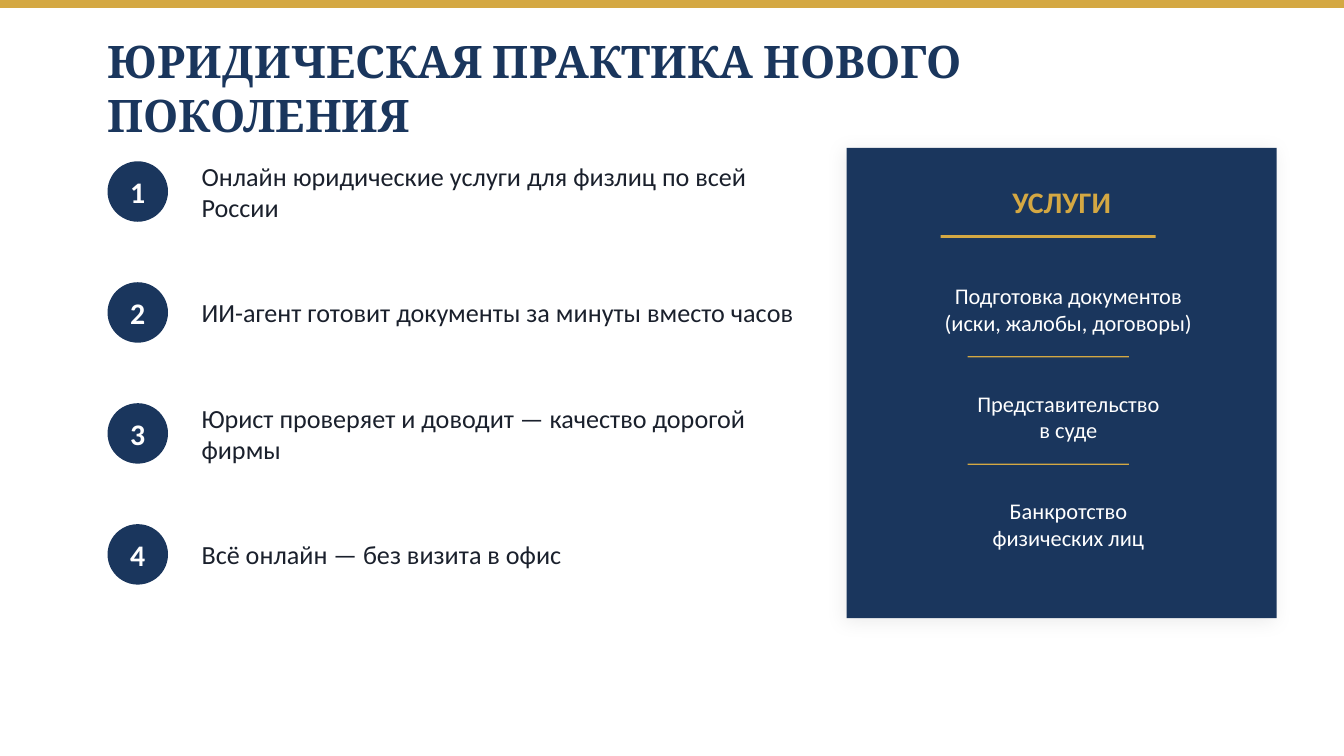
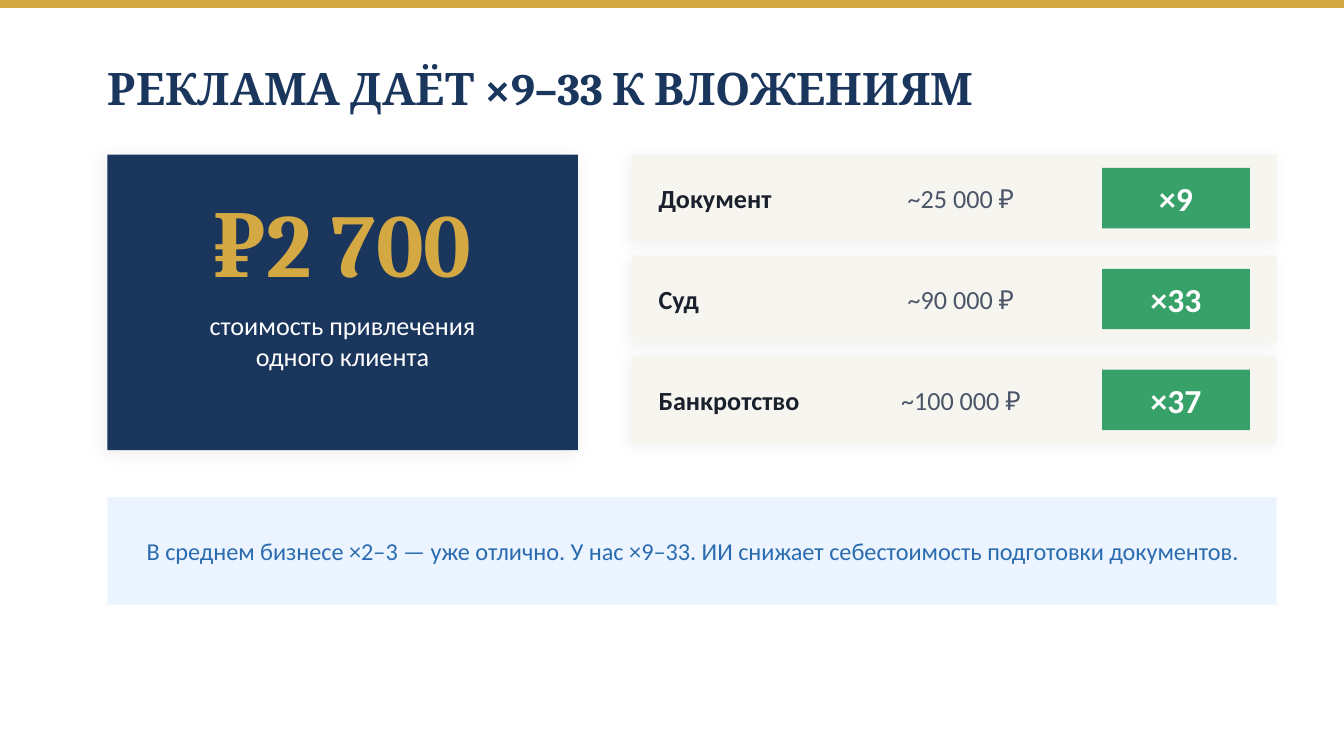
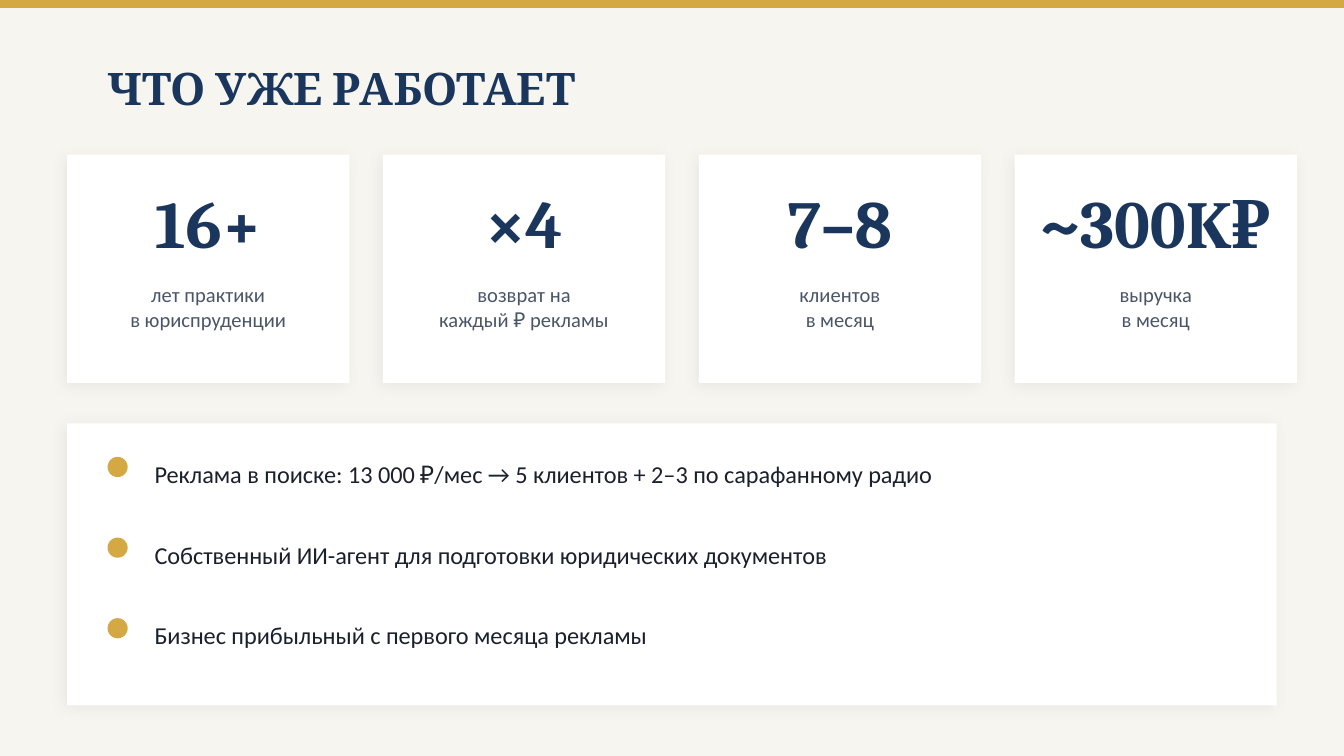
from dataclasses import dataclass

from pptx import Presentation
from pptx.dml.color import RGBColor
from pptx.enum.shapes import MSO_SHAPE
from pptx.enum.text import MSO_ANCHOR, MSO_AUTO_SIZE, PP_ALIGN
from pptx.oxml import parse_xml
from pptx.oxml.ns import nsdecls, qn
from pptx.util import Inches, Pt


@dataclass(frozen=True)
class Theme:
    navy: str = "1A365D"
    gold: str = "D4A843"
    green: str = "38A169"
    cream: str = "F7F5F0"
    white: str = "FFFFFF"
    ink: str = "1A202C"
    grey: str = "4A5568"
    pale_blue: str = "EBF4FF"
    blue: str = "2B6CB0"
    serif: str = "Cambria"
    sans: str = "Calibri"
    hero: int = 48
    figure: int = 36
    title: int = 24
    badge: int = 18
    heading: int = 16
    body: int = 14
    note: int = 13
    service: int = 12
    caption: int = 11


T = Theme()
STRONG_SHADOW = (10, 8)
SOFT_SHADOW = (8, 6)


def write_text(tf, text, size=T.body, color=T.ink, font=T.sans, bold=False,
               align=PP_ALIGN.LEFT, anchor=MSO_ANCHOR.MIDDLE):
    """Fill a text frame, one paragraph per line of text."""
    tf.text = text
    tf.word_wrap = True
    tf.auto_size = MSO_AUTO_SIZE.NONE
    tf.vertical_anchor = anchor
    tf.margin_left = tf.margin_right = tf.margin_top = tf.margin_bottom = 0
    for p in tf.paragraphs:
        p.alignment = align
        p.font.name = font
        p.font.size = Pt(size)
        p.font.bold = bold
        p.font.color.rgb = RGBColor.from_string(color)


def add_text(s, x, y, w, h, text, **style):
    box = s.shapes.add_textbox(Inches(x), Inches(y), Inches(w), Inches(h))
    write_text(box.text_frame, text, **style)


def add_centered(s, x, y, w, h, text, **style):
    add_text(s, x, y, w, h, text, align=PP_ALIGN.CENTER, **style)


def add_box(s, x, y, w, h, fill, kind=MSO_SHAPE.RECTANGLE, shadow=None):
    """Add a shape without outline; shadow is (blur in points, opacity in %)."""
    sp = s.shapes.add_shape(kind, Inches(x), Inches(y), Inches(w), Inches(h))
    sp.fill.solid()
    sp.fill.fore_color.rgb = RGBColor.from_string(fill)
    sp.line.fill.background()
    sp.shadow.inherit = False
    if shadow:
        blur, opacity = shadow
        effects = sp._element.spPr.find(qn("a:effectLst"))
        effects.append(parse_xml(
            f'<a:outerShdw {nsdecls("a")} blurRad="{Pt(blur)}" dist="{Pt(2)}" '
            f'dir="{135 * 60000}" algn="bl" rotWithShape="0">'
            f'<a:srgbClr val="000000"><a:alpha val="{opacity * 1000}"/>'
            f'</a:srgbClr></a:outerShdw>'))
    return sp


def add_label_box(s, x, y, w, h, text, fill, size, kind=MSO_SHAPE.RECTANGLE):
    sp = add_box(s, x, y, w, h, fill, kind)
    write_text(sp.text_frame, text, size=size, color=T.white, bold=True,
               align=PP_ALIGN.CENTER)


def add_slide(prs, title, background=T.white):
    s = prs.slides.add_slide(prs.slide_layouts[5])
    s.background.fill.solid()
    s.background.fill.fore_color.rgb = RGBColor.from_string(background)
    add_box(s, 0, 0, 10, 0.06, T.gold)
    sp = s.shapes.title
    sp.left, sp.top = Inches(0.8), Inches(0.4)
    sp.width, sp.height = Inches(8.4), Inches(0.5)
    write_text(sp.text_frame, title, size=T.title, color=T.navy,
               font=T.serif, bold=True)
    return s


def add_numbered_points(s, points):
    for i, point in enumerate(points):
        y = 1.2 + 0.9 * i
        add_label_box(s, 0.8, y, 0.45, 0.45, str(i + 1), T.navy, T.heading,
                      kind=MSO_SHAPE.OVAL)
        add_text(s, 1.5, y, 4.5, 0.45, point)


def add_services_panel(s, heading, services):
    add_box(s, 6.3, 1.1, 3.2, 3.5, T.navy, shadow=STRONG_SHADOW)
    add_centered(s, 6.5, 1.3, 2.8, 0.4, heading, size=T.heading,
                 color=T.gold, bold=True)
    add_box(s, 7, 1.75, 1.6, 0.02, T.gold)
    for i, service in enumerate(services):
        y = 1.95 + 0.8 * i
        if i:
            add_box(s, 7.2, y - 0.1, 1.2, 0.01, T.gold)
        add_centered(s, 6.6, y, 2.7, 0.7, service, size=T.service,
                     color=T.white)


def add_cost_card(s, cost, caption):
    add_box(s, 0.8, 1.15, 3.5, 2.2, T.navy, shadow=STRONG_SHADOW)
    add_centered(s, 0.8, 1.3, 3.5, 1, cost, size=T.hero, color=T.gold,
                 font=T.serif, bold=True)
    add_centered(s, 0.8, 2.3, 3.5, 0.7, caption, color=T.white,
                 anchor=MSO_ANCHOR.TOP)


def add_return_rows(s, rows):
    for i, (service, price, multiple) in enumerate(rows):
        y = 1.15 + 0.75 * i
        add_box(s, 4.7, y, 4.8, 0.65, T.cream, shadow=SOFT_SHADOW)
        add_text(s, 4.9, y, 1.5, 0.65, service, bold=True)
        add_centered(s, 6.4, y, 1.5, 0.65, price, color=T.grey)
        add_label_box(s, 8.2, y + 0.1, 1.1, 0.45, multiple, T.green, T.badge)


def add_note(s, text):
    add_box(s, 0.8, 3.7, 8.7, 0.8, T.pale_blue)
    add_centered(s, 1, 3.75, 8.3, 0.7, text, size=T.note, color=T.blue)


def add_metric_cards(s, metrics):
    for i, (figure, caption) in enumerate(metrics):
        x = 0.5 + 2.35 * i
        add_box(s, x, 1.15, 2.1, 1.7, T.white, shadow=SOFT_SHADOW)
        add_centered(s, x, 1.3, 2.1, 0.7, figure, size=T.figure,
                     color=T.navy, font=T.serif, bold=True)
        add_centered(s, x + 0.1, 2.1, 1.9, 0.6, caption, size=T.caption,
                     color=T.grey, anchor=MSO_ANCHOR.TOP)


def add_facts_panel(s, facts):
    add_box(s, 0.5, 3.15, 9, 2.1, T.white, shadow=SOFT_SHADOW)
    for i, fact in enumerate(facts):
        y = 3.3 + 0.6 * i
        add_box(s, 0.8, y + 0.1, 0.15, 0.15, T.gold, kind=MSO_SHAPE.OVAL)
        add_text(s, 1.15, y, 8, 0.45, fact, size=T.note)


def main():
    prs = Presentation()
    prs.slide_width, prs.slide_height = Inches(10), Inches(5.625)

    s = add_slide(prs, "ЮРИДИЧЕСКАЯ ПРАКТИКА НОВОГО ПОКОЛЕНИЯ")
    add_numbered_points(s, [
        "Онлайн юридические услуги для физлиц по всей России",
        "ИИ-агент готовит документы за минуты вместо часов",
        "Юрист проверяет и доводит — качество дорогой фирмы",
        "Всё онлайн — без визита в офис",
    ])
    add_services_panel(s, "УСЛУГИ", [
        "Подготовка документов\n(иски, жалобы, договоры)",
        "Представительство\nв суде",
        "Банкротство\nфизических лиц",
    ])

    s = add_slide(prs, "РЕКЛАМА ДАЁТ ×9–33 К ВЛОЖЕНИЯМ")
    add_cost_card(s, "₽2 700", "стоимость привлечения\nодного клиента")
    add_return_rows(s, [
        ("Документ", "~25 000 ₽", "×9"),
        ("Суд", "~90 000 ₽", "×33"),
        ("Банкротство", "~100 000 ₽", "×37"),
    ])
    add_note(s, "В среднем бизнесе ×2–3 — уже отлично. У нас ×9–33. "
                "ИИ снижает себестоимость подготовки документов.")

    s = add_slide(prs, "ЧТО УЖЕ РАБОТАЕТ", background=T.cream)
    add_metric_cards(s, [
        ("16+", "лет практики\nв юриспруденции"),
        ("×4", "возврат на\nкаждый ₽ рекламы"),
        ("7–8", "клиентов\nв месяц"),
        ("~300K₽", "выручка\nв месяц"),
    ])
    add_facts_panel(s, [
        "Реклама в поиске: 13 000 ₽/мес → 5 клиентов + 2–3 по сарафанному радио",
        "Собственный ИИ-агент для подготовки юридических документов",
        "Бизнес прибыльный с первого месяца рекламы",
    ])

    prs.save("out.pptx")


if __name__ == "__main__":
    main()
